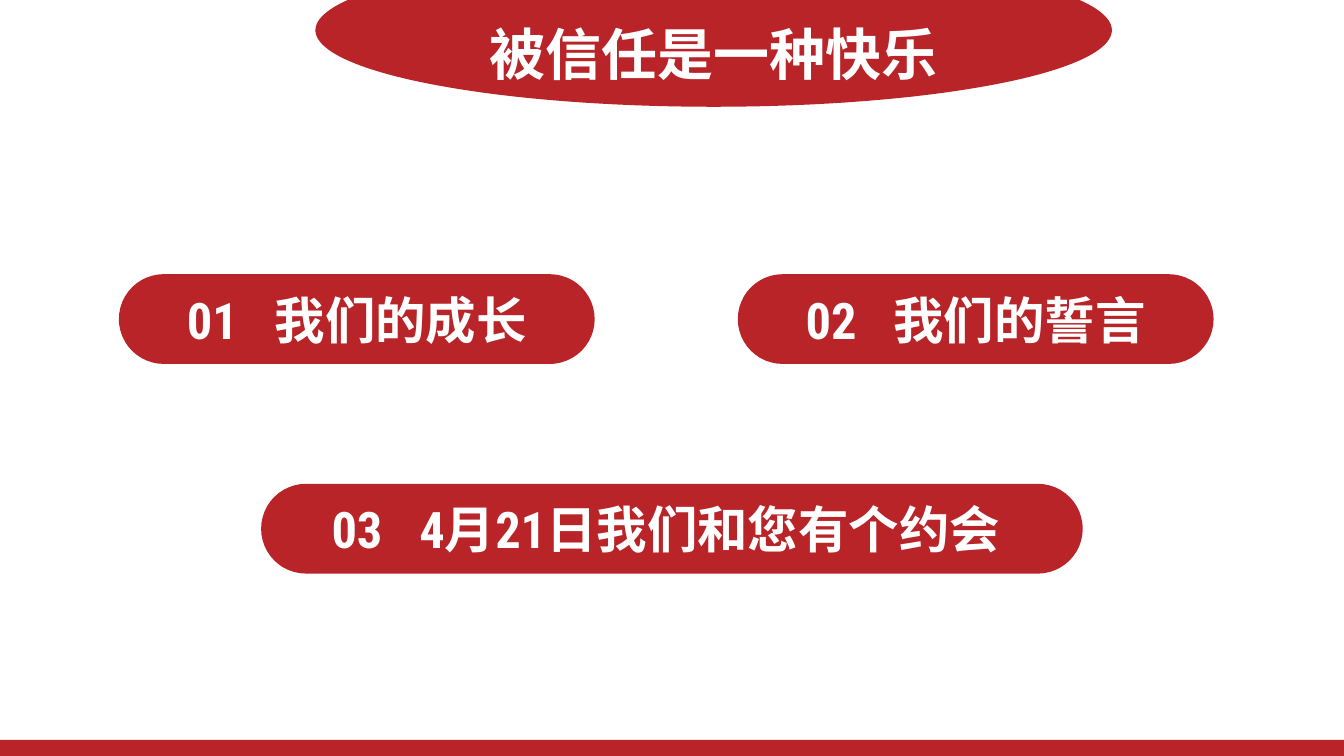
"""Builds the agenda slide: a title arch, three numbered pills and a footer bar."""
from math import asin, cos, pi, sin

from pptx import Presentation
from pptx.dml.color import RGBColor
from pptx.enum.shapes import MSO_SHAPE as SHAPE
from pptx.enum.text import MSO_ANCHOR as ANCHOR, PP_ALIGN as ALIGN
from pptx.util import Inches, Pt

COLORS = {"red": "B82428", "white": "FFFFFF"}
FORMAT = {"name": "Roboto Condensed", "bold": True}
WIDTH, HEIGHT = Inches(13.33), Inches(7.5)
PILL_HEIGHT = 11.87
NUMBER_GAP = Pt(18)
PILLS = [
    ("01", "我们的成长", 8.85, 36.27, 35.4, 0),
    ("03", "4月21日我们和您有个约会", 19.43, 64, 61.13, 0.12),
    ("02", "我们的誓言", 54.9, 36.27, 35.4, 0),
]


def across(share):
    """Turn a percentage of the slide width into a length."""
    return round(WIDTH * share / 100)


def down(share):
    """Turn a percentage of the slide height into a length."""
    return round(HEIGHT * share / 100)


def paint(sp):
    """Give a shape the plain red look."""
    sp.shadow.inherit = False
    sp.fill.solid()
    sp.fill.fore_color.rgb = RGBColor.from_string(COLORS["red"])
    sp.line.fill.background()
    return sp


def add_block(s, kind, x, y, w, h):
    """Add a red preset shape placed by shares of the slide."""
    return paint(s.shapes.add_shape(kind, across(x), down(y), across(w), down(h)))


def write(sp, texts, size):
    """Write centred white runs into a shape."""
    tf = sp.text_frame
    tf.word_wrap = True
    tf.vertical_anchor = ANCHOR.MIDDLE
    p = tf.paragraphs[0]
    p.alignment = ALIGN.CENTER
    for text in texts:
        r = p.add_run()
        r.text = text
        for key, value in {**FORMAT, "size": Pt(size)}.items():
            setattr(r.font, key, value)
        r.font.color.rgb = RGBColor.from_string(COLORS["white"])
    return p


def add_arch(s, title, cx, cy, rx, ry, steps=120):
    """Add an ellipse cut off by the slide's top edge, with the title in it."""
    start = -asin(cy / ry)
    sweep = pi - 2 * start
    angles = [start + sweep * i / steps for i in range(steps + 1)]
    points = [(across(cx + rx * cos(a)), max(0, down(cy + ry * sin(a)))) for a in angles]
    outline = s.shapes.build_freeform(*points[0])
    outline.add_line_segments(points[1:], close=True)
    write(paint(outline.convert_to_shape()), [title], 40)


def add_pill(s, number, title, x, y, w, inset):
    """Add a rounded pill with a number, a widened space and a title."""
    sp = add_block(s, SHAPE.ROUNDED_RECTANGLE, x, y, w, PILL_HEIGHT)
    sp.adjustments[0] = 0.5
    p = write(sp, [number, " ", title], 36)
    p.runs[1].font._element.set("spc", str(int(NUMBER_GAP.pt * 100)))
    sp.text_frame.margin_right = Inches(0.1 + inset)


def main():
    """Build and save the slide."""
    prs = Presentation()
    prs.slide_width, prs.slide_height = WIDTH, HEIGHT
    s = prs.slides.add_slide(prs.slide_layouts[6])
    add_arch(s, "被信任是一种快乐", 53.1, 4, 29.63, 10.13)
    for pill in PILLS:
        add_pill(s, *pill)
    add_block(s, SHAPE.RECTANGLE, 0, 97.87, 100, 2.13)
    prs.save("out.pptx")


if __name__ == "__main__":
    main()
